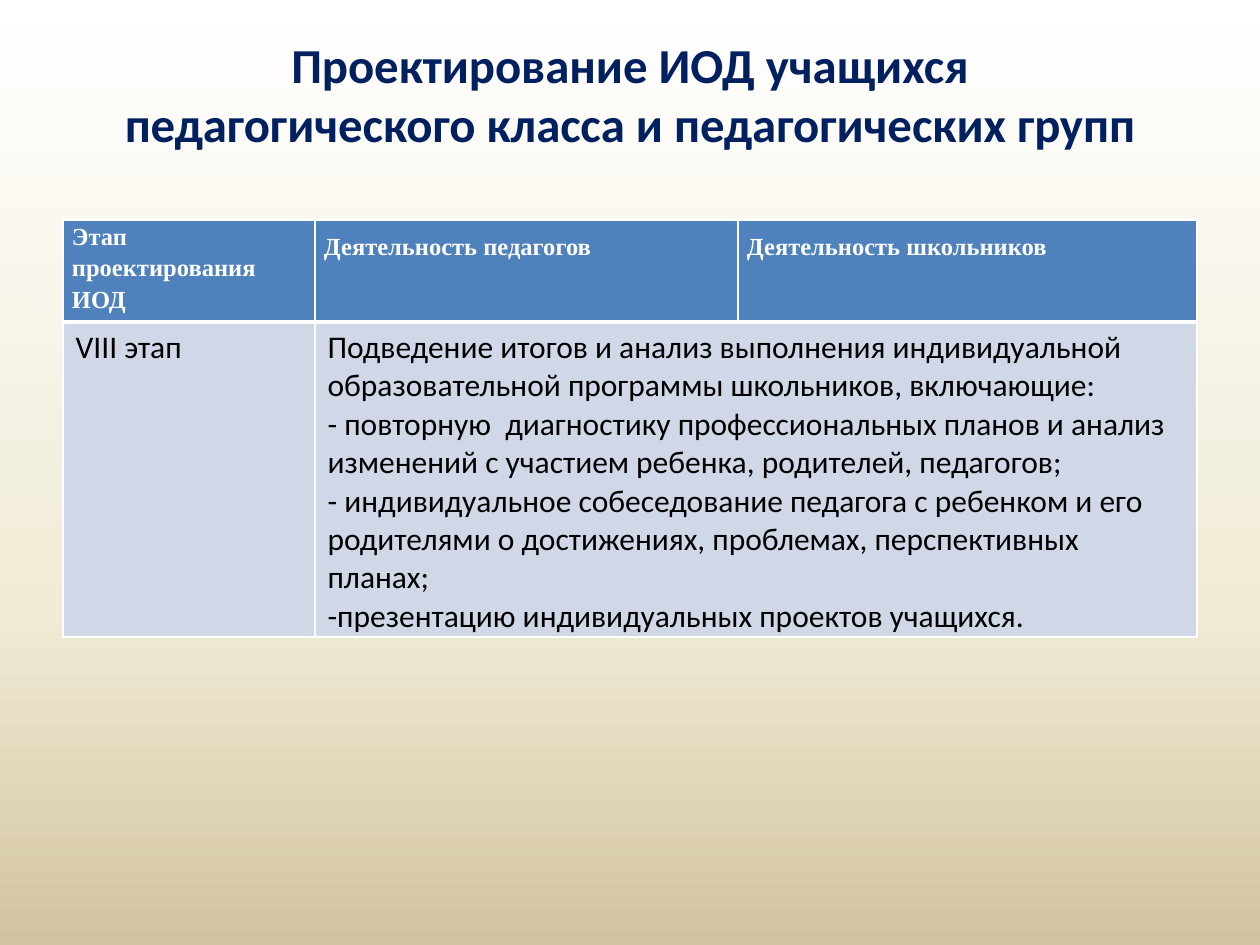
from copy import deepcopy

from lxml import etree
from pptx import Presentation
from pptx import util as u
from pptx.dml.color import RGBColor
from pptx.enum import text
from pptx.oxml.ns import qn

PX = 914400 / 126
COLORS = {
    "title": "002060",
    "header": "4F81BD",
    "body": "D0D8E8",
    "white": "FFFFFF",
    "black": "000000",
}
BACKDROP = [(0, "FFFFFF"), (65, "F0EBD5"), (100, "D1C39F")]


def px(length):
    return u.Emu(round(length * PX))


def add_borders(cell, top, bottom):
    """Draw white cell borders, with top and bottom widths in points."""
    props = cell._tc.get_or_add_tcPr()
    widths = {"lnL": 1, "lnR": 1, "lnT": top, "lnB": bottom}
    for index, (tag, width) in enumerate(widths.items()):
        line = etree.Element(qn("a:" + tag), w=str(u.Pt(width)))
        fill = etree.SubElement(line, qn("a:solidFill"))
        etree.SubElement(fill, qn("a:srgbClr"), val=COLORS["white"])
        props.insert(index, line)


deck = Presentation()
deck.slide_width, deck.slide_height = px(1260), px(945)
page = deck.slides.add_slide(deck.slide_layouts[6])

# Background gradient
backdrop = page.background.fill
backdrop.gradient()
backdrop.gradient_angle = 270
stop_list = next(page.element.iter(qn("a:gsLst")))
stop_list.append(deepcopy(stop_list[-1]))
for stop, (percent, color) in zip(backdrop.gradient_stops, BACKDROP):
    stop.position = percent / 100
    stop.color.rgb = RGBColor.from_string(color)

# Title
box = page.shapes.add_textbox(px(63), px(38), px(1134), px(189))
frame = box.text_frame
frame.word_wrap = True
frame.vertical_anchor = text.MSO_ANCHOR.MIDDLE
frame.margin_top, frame.margin_bottom = 0, px(78)
frame.text = "Проектирование ИОД учащихся\vпедагогического класса и педагогических групп"
para = frame.paragraphs[0]
para.alignment = text.PP_ALIGN.CENTER
for span in para.runs:
    span.font.name, span.font.size, span.font.bold = "Calibri", u.Pt(27.9), True
    span.font.color.rgb = RGBColor.from_string(COLORS["title"])

# Table
headers = ["Этап проектирования ИОД", "Деятельность педагогов", "Деятельность школьников"]
summary = [
    "Подведение итогов и анализ выполнения индивидуальной образовательной программы школьников, включающие:",
    "- повторную  диагностику профессиональных планов и анализ изменений с участием ребенка, родителей, педагогов;",
    "- индивидуальное собеседование педагога с ребенком и его родителями о достижениях, проблемах, перспективных планах;",
    "-презентацию индивидуальных проектов учащихся.",
]
rows = [headers, ["VIII этап", "\n".join(summary), ""]]
table = page.shapes.add_table(2, 3, px(63), px(220), px(1134), px(417)).table
for column, width in zip(table.columns, [252, 423, 459]):
    column.width = px(width)
for row, height in zip(table.rows, [102, 315]):
    row.height = px(height)
table.cell(1, 1).merge(table.cell(1, 2))

for row_index, values in enumerate(rows):
    is_header = row_index == 0
    for column_index, value in enumerate(values):
        cell = table.cell(row_index, column_index)
        cell.fill.solid()
        cell.fill.fore_color.rgb = RGBColor.from_string(COLORS["header" if is_header else "body"])
        add_borders(cell, *((1, 3) if is_header else (3, 1)))
        if is_header:
            cell.margin_left = cell.margin_right = px(9)
            cell.margin_top = cell.margin_bottom = 0
        if not value:
            continue
        cell.text_frame.text = value
        for para in cell.text_frame.paragraphs:
            if is_header:
                para.alignment = text.PP_ALIGN.JUSTIFY
                para.line_spacing = 1.15 if column_index == 0 else 1.5
            for span in para.runs:
                span.font.name = "Times New Roman" if is_header else "Calibri"
                span.font.size = u.Pt(14 if is_header else 18)
                span.font.bold = is_header
                span.font.color.rgb = RGBColor.from_string(COLORS["white" if is_header else "black"])

deck.save("out.pptx")
